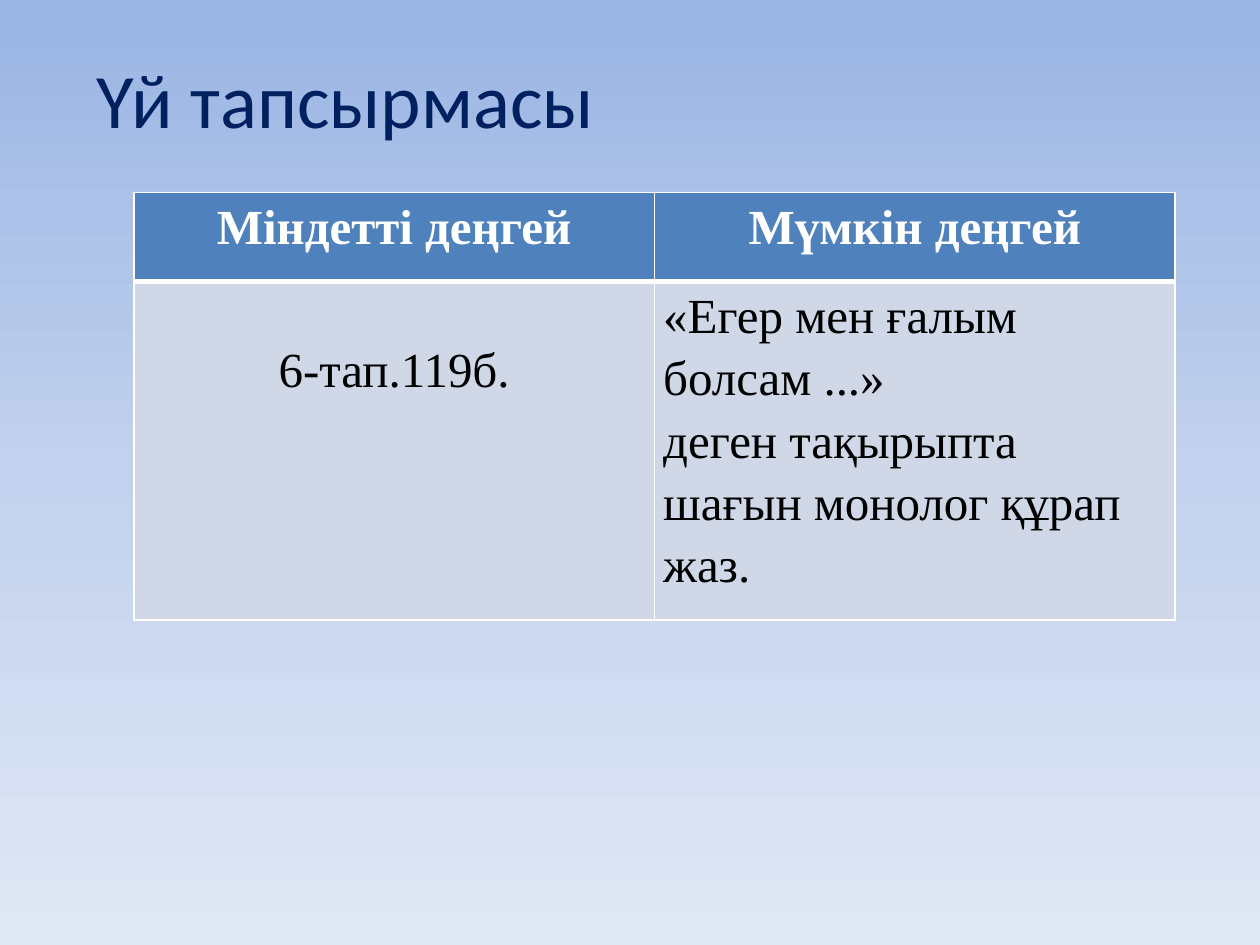
from copy import deepcopy
from dataclasses import dataclass, field

from lxml import etree
from pptx import Presentation, util as u
from pptx.dml import color as c
from pptx.enum import text
from pptx.oxml import ns

COLORS = {
    "title": "002060", "header": "4F81BD", "body": "D0D8E8",
    "white": "FFFFFF", "black": "000000",
    "sky": "9AB5E4", "mid": "C2D1ED", "pale": "E1E8F5",
}
SERIF = "Times New Roman"
LEFT, CENTER = text.PP_ALIGN.LEFT, text.PP_ALIGN.CENTER
HEADER_FONT = {"name": SERIF, "size": u.Pt(28), "bold": True}
BODY_FONT = {**HEADER_FONT, "bold": False}
TITLE_FONT = {"name": "Calibri", "size": u.Pt(44), "bold": False}


@dataclass
class Cell:
    lines: list[str]
    fill: str
    color: str
    font: dict
    align: int = CENTER
    top: float = 0
    borders: dict = field(default_factory=dict)


HEADER = {"fill": "header", "color": "white", "font": HEADER_FONT,
          "borders": {"L": 1, "R": 1, "T": 1, "B": 3}}
BODY = {"fill": "body", "color": "black", "font": BODY_FONT,
        "borders": {"L": 1, "R": 1, "T": 3, "B": 1}}
ROWS = [
    [Cell(["Міндетті деңгей"], **HEADER), Cell(["Мүмкін деңгей"], **HEADER)],
    [Cell(["6-тап.119б."], top=31, **BODY),
     Cell(["«Егер мен ғалым болсам ...»",
           "деген тақырыпта шағын монолог құрап жаз."], align=LEFT, **BODY)],
]
ROW_HEIGHTS = [51, 193]
COL_WIDTH = 297.5


def rgb(name: str) -> c.RGBColor:
    return c.RGBColor.from_string(COLORS[name])


def set_all(obj, values: dict) -> None:
    for name, value in values.items():
        setattr(obj, name, value)


def write(p, line: str, font: dict, color: str) -> None:
    r = p.add_run()
    r.text = line
    set_all(r.font, font)
    r.font.color.rgb = rgb(color)


def paint_background(s, names: list[str]) -> None:
    fill = s.background.fill
    fill.gradient()
    fill.gradient_angle = 270
    stops = s.element.xpath(".//a:gsLst")[0]
    while len(stops) < len(names):
        stops.append(deepcopy(stops[-1]))
    for i, (stop, name) in enumerate(zip(fill.gradient_stops, names)):
        stop.position = i / (len(names) - 1)
        stop.color.rgb = rgb(name)


def draw_borders(cell, borders: dict) -> None:
    tc_pr = cell._tc.get_or_add_tcPr()
    for i, (side, width) in enumerate(borders.items()):
        ln = etree.Element(ns.qn(f"a:ln{side}"), w=str(u.Pt(width)))
        solid = etree.SubElement(ln, ns.qn("a:solidFill"))
        etree.SubElement(solid, ns.qn("a:srgbClr"), val=COLORS["white"])
        tc_pr.insert(i, ln)


def fill_cell(cell, data: Cell) -> None:
    set_all(cell, {"margin_left": u.Pt(5), "margin_right": u.Pt(5),
                   "margin_top": u.Pt(data.top), "margin_bottom": 0})
    cell.fill.solid()
    cell.fill.fore_color.rgb = rgb(data.fill)
    draw_borders(cell, data.borders)
    tf = cell.text_frame
    for i, line in enumerate(data.lines):
        p = tf.add_paragraph() if i else tf.paragraphs[0]
        set_all(p, {"alignment": data.align, "line_spacing": 1.15})
        write(p, line, data.font, data.color)


def add_title(s, title: str) -> None:
    sp = s.shapes.title
    set_all(sp, {"left": u.Pt(48), "top": u.Pt(26),
                 "width": u.Pt(313), "height": u.Pt(60.5)})
    tf = sp.text_frame
    set_all(tf, {"word_wrap": False,
                 "auto_size": text.MSO_AUTO_SIZE.SHAPE_TO_FIT_TEXT,
                 "vertical_anchor": text.MSO_ANCHOR.TOP})
    p = tf.paragraphs[0]
    p.alignment = LEFT
    write(p, title, TITLE_FONT, "title")


def add_levels(s) -> None:
    table = s.shapes.add_table(
        len(ROWS), len(ROWS[0]), u.Pt(76.5), u.Pt(110),
        u.Pt(COL_WIDTH * len(ROWS[0])), u.Pt(sum(ROW_HEIGHTS))).table
    for col in table.columns:
        col.width = u.Pt(COL_WIDTH)
    for i, (height, row) in enumerate(zip(ROW_HEIGHTS, ROWS)):
        table.rows[i].height = u.Pt(height)
        for j, data in enumerate(row):
            fill_cell(table.cell(i, j), data)


def main() -> None:
    prs = Presentation()
    set_all(prs, {"slide_width": u.Pt(720), "slide_height": u.Pt(540)})
    s = prs.slides.add_slide(prs.slide_layouts[5])
    paint_background(s, ["sky", "mid", "pale"])
    add_title(s, "Үй тапсырмасы")
    add_levels(s)
    prs.save("out.pptx")


if __name__ == "__main__":
    main()
